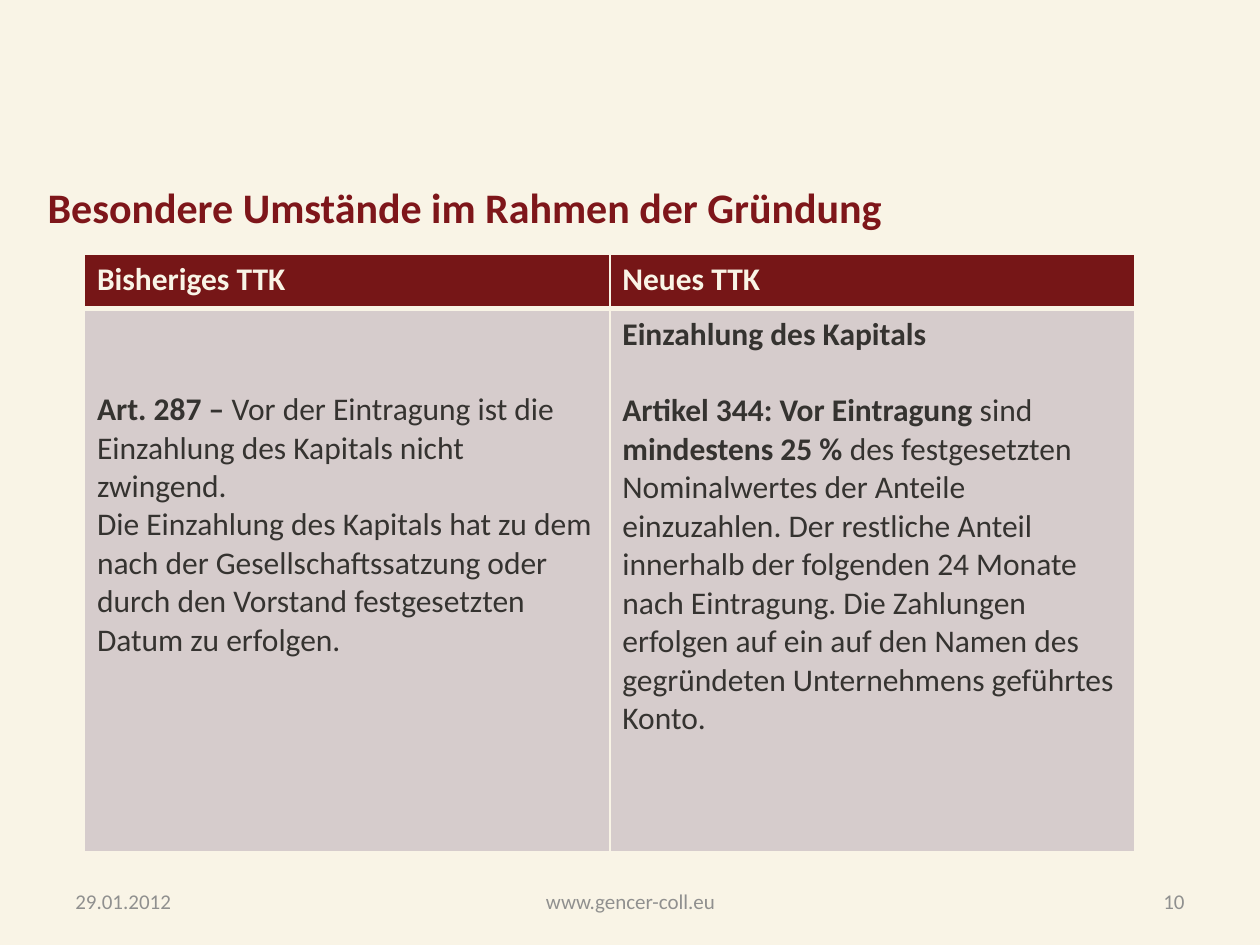
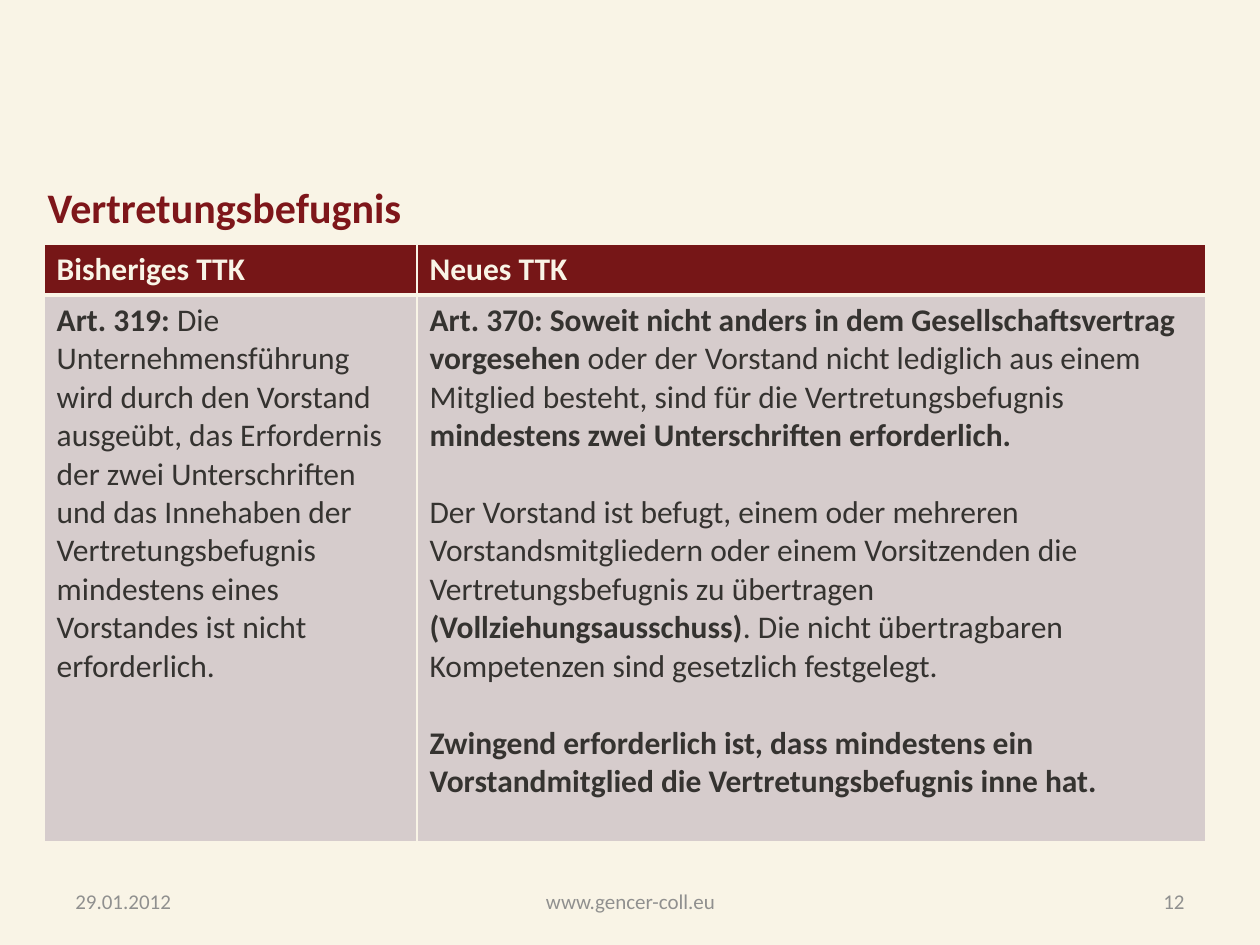
from dataclasses import dataclass

from lxml import etree
from pptx import Presentation
from pptx import util as u
from pptx.dml.color import RGBColor
from pptx.enum import text
from pptx.oxml.ns import qn


@dataclass(frozen=True)
class Theme:
    font: str = "Calibri"
    paper: str = "F9F4E6"
    title: str = "7E161A"
    header: str = "761617"
    body: str = "D6CCCC"
    ink: str = "353330"
    muted: str = "90908F"
    title_size: int = 24
    table_size: int = 18
    footer_size: int = 12
    paragraph_gap: int = 22
    thin_rule: int = 1
    thick_rule: int = 3


class Slides:
    """Holds the deck, its theme and the current page."""

    def __init__(self, theme):
        self.theme = theme
        self.deck = Presentation()
        self.deck.slide_width = u.Inches(10)
        self.deck.slide_height = u.Inches(7.5)
        backdrop = self.deck.slide_master.background.fill
        backdrop.solid()
        backdrop.fore_color.rgb = RGBColor.from_string(theme.paper)
        self.page = None

    def add_page(self, title, number):
        self.page = self.deck.slides.add_slide(self.deck.slide_layouts[6])
        self.footer(number)
        self.box(0.28, 1.39, 7.87, 0.47, title, self.theme.title_size,
                 self.theme.title, bold=True)

    def add_span(self, para, words, size, color, bold=False):
        span = para.add_run()
        span.text = words
        span.font.name = self.theme.font
        span.font.size = u.Pt(size)
        span.font.bold = bold
        span.font.color.rgb = RGBColor.from_string(color)

    def box(self, left, top, width, height, words, size, color, bold=False,
            align=text.PP_ALIGN.LEFT, anchor=text.MSO_ANCHOR.TOP):
        box = self.page.shapes.add_textbox(
            u.Inches(left), u.Inches(top), u.Inches(width), u.Inches(height))
        frame = box.text_frame
        frame.word_wrap = True
        frame.vertical_anchor = anchor
        para = frame.paragraphs[0]
        para.alignment = align
        self.add_span(para, words, size, color, bold)

    def footer(self, number):
        align = text.PP_ALIGN
        parts = [(0.5, 2.33, "29.01.2012", align.LEFT),
                 (3.42, 3.17, "www.gencer-coll.eu", align.CENTER),
                 (7.17, 2.33, str(number), align.RIGHT)]
        for left, width, words, side in parts:
            self.box(left, 6.95, width, 0.4, words, self.theme.footer_size,
                     self.theme.muted, align=side, anchor=text.MSO_ANCHOR.MIDDLE)

    def cell_borders(self, cell, top, bottom):
        thin = self.theme.thin_rule
        properties = cell._tc.get_or_add_tcPr()
        for side, points in (("L", thin), ("R", thin), ("T", top), ("B", bottom)):
            line = etree.SubElement(properties, qn(f"a:ln{side}"), w=str(u.Pt(points)))
            fill = etree.SubElement(line, qn("a:solidFill"))
            etree.SubElement(fill, qn("a:srgbClr"), val=self.theme.paper)

    def fill_cell(self, cell, paragraphs, fill, color):
        """Each paragraph is (gap before, [(words, bold), ...])."""
        cell.fill.solid()
        cell.fill.fore_color.rgb = RGBColor.from_string(fill)
        frame = cell.text_frame
        for index, (gap, spans) in enumerate(paragraphs):
            para = frame.add_paragraph() if index else frame.paragraphs[0]
            if gap:
                para.space_before = u.Pt(gap)
            for words, bold in spans:
                self.add_span(para, words, self.theme.table_size, color, bold)

    def comparison(self, left, top, columns, rows, old_law, new_law):
        """Table with the old law on the left and the new law on the right."""
        theme = self.theme
        table = self.page.shapes.add_table(
            2, 2, u.Inches(left), u.Inches(top),
            u.Inches(sum(columns)), u.Inches(sum(rows))).table
        for column, width in zip(table.columns, columns):
            column.width = u.Inches(width)
        for row, height in zip(table.rows, rows):
            row.height = u.Inches(height)
        for index, (heading, law) in enumerate(
                [("Bisheriges TTK", old_law), ("Neues TTK", new_law)]):
            head, body = table.cell(0, index), table.cell(1, index)
            self.cell_borders(head, theme.thin_rule, theme.thick_rule)
            self.cell_borders(body, theme.thick_rule, theme.thin_rule)
            self.fill_cell(head, [(0, [(heading, True)])], theme.header, theme.paper)
            self.fill_cell(body, law, theme.body, theme.ink)
        return table


def main():
    theme = Theme()
    gap = theme.paragraph_gap
    slides = Slides(theme)

    # Payment of the capital
    slides.add_page("Besondere Umstände im Rahmen der Gründung", 10)
    capital = slides.comparison(
        0.67, 2.02, (4.17, 4.17), (0.43, 4.31),
        old_law=[
            (0, [("Art. 287 – ", True),
                 ("Vor der Eintragung ist die Einzahlung des Kapitals nicht "
                  "zwingend.", False)]),
            (0, [("Die Einzahlung des Kapitals hat zu dem nach der "
                  "Gesellschaftssatzung oder durch den Vorstand festgesetzten "
                  "Datum zu erfolgen.", False)]),
        ],
        new_law=[
            (0, [("Einzahlung des Kapitals", True)]),
            (gap, [("Artikel 344: Vor Eintragung ", True),
                   ("sind ", False),
                   ("mindestens 25 % ", True),
                   ("des festgesetzten Nominalwertes der Anteile einzuzahlen. "
                    "Der restliche Anteil innerhalb der folgenden 24 Monate nach "
                    "Eintragung. Die Zahlungen erfolgen auf ein auf den Namen des "
                    "gegründeten Unternehmens geführtes Konto.", False)]),
        ])
    # The old article starts level with the new one
    capital.cell(1, 0).margin_top = u.Inches(0.65)

    # Power of representation
    slides.add_page("Vertretungsbefugnis", 12)
    slides.comparison(
        0.35, 1.94, (2.96, 6.26), (0.4, 4.34),
        old_law=[
            (0, [("Art. 319: ", True),
                 ("Die Unternehmensführung wird durch den Vorstand ausgeübt, das "
                  "Erfordernis der zwei Unterschriften und das Innehaben der "
                  "Vertretungsbefugnis mindestens eines Vorstandes ist nicht "
                  "erforderlich.", False)]),
        ],
        new_law=[
            (0, [("Art. 370: Soweit nicht anders in dem Gesellschaftsvertrag "
                  "vorgesehen ", True),
                 ("oder der Vorstand nicht lediglich aus einem Mitglied besteht, "
                  "sind für die Vertretungsbefugnis ", False),
                 ("mindestens zwei Unterschriften erforderlich.", True)]),
            (gap, [("Der Vorstand ist befugt, einem oder mehreren "
                    "Vorstandsmitgliedern oder einem Vorsitzenden die "
                    "Vertretungsbefugnis zu übertragen ", False),
                   ("(Vollziehungsausschuss)", True),
                   (". Die nicht übertragbaren Kompetenzen sind gesetzlich "
                    "festgelegt.", False)]),
            (gap, [("Zwingend erforderlich ist, dass mindestens ein "
                    "Vorstandmitglied die Vertretungsbefugnis inne hat.", True)]),
        ])

    slides.deck.save("out.pptx")


if __name__ == "__main__":
    main()
